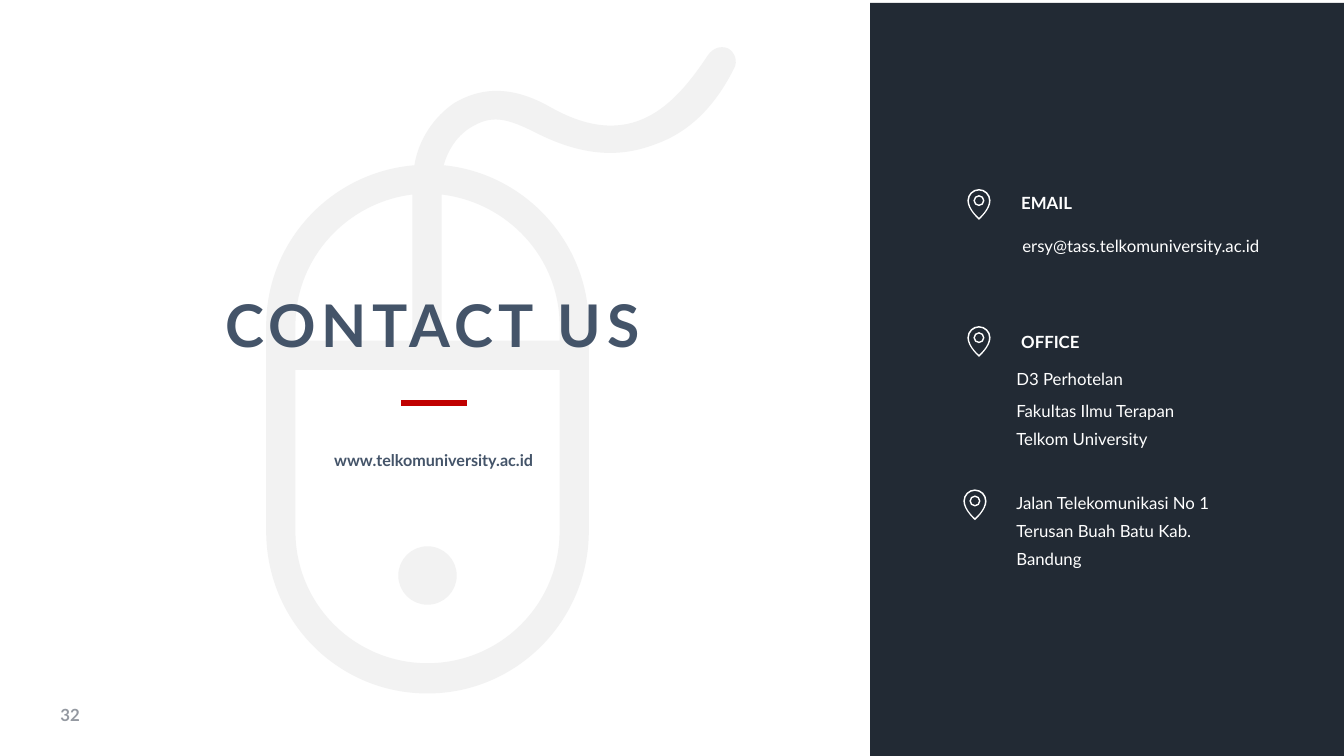
from dataclasses import dataclass

from lxml import etree
from pptx import Presentation
from pptx.dml.color import RGBColor
from pptx.enum.shapes import MSO_CONNECTOR, MSO_SHAPE
from pptx.enum.text import MSO_ANCHOR, PP_ALIGN
from pptx.oxml.ns import qn
from pptx.util import Inches, Pt

LEFT, CENTER = PP_ALIGN.LEFT, PP_ALIGN.CENTER
TOP, MIDDLE = MSO_ANCHOR.TOP, MSO_ANCHOR.MIDDLE


@dataclass(frozen=True)
class Theme:
    font: str = "Lato"
    panel: RGBColor = RGBColor.from_string("222A34")
    heading: RGBColor = RGBColor.from_string("445469")
    accent: RGBColor = RGBColor.from_string("C00000")
    mouse: RGBColor = RGBColor.from_string("F2F2F2")
    muted: RGBColor = RGBColor.from_string("9499A1")
    white: RGBColor = RGBColor.from_string("FFFFFF")
    title_size: float = 42
    web_size: float = 11.5
    body_size: float = 12
    line_pitch: float = 20.2


T = Theme()


def add_outline(s, contours, color, dx=0, dy=0):
    """Fill contours whose steps are points (x, y) or Bezier curves (x1, y1, x2, y2, x, y)."""
    builder = None
    for contour in contours:
        start, *rest = [(Inches(step[i] + dx), Inches(step[i + 1] + dy))
                        for step in contour for i in range(0, len(step), 2)]
        if builder is None:
            builder = s.shapes.build_freeform(*start)
        else:
            builder.move_to(*start)
        builder.add_line_segments(rest, close=True)
    sp = builder.convert_to_shape()
    outline = next(sp.element.iter(qn("a:path")))
    lines = iter(outline.findall(qn("a:lnTo")))
    for step in [step for contour in contours for step in contour[1:]]:
        first = next(lines)
        if len(step) == 6:
            curve = etree.Element(qn("a:cubicBezTo"))
            outline.replace(first, curve)
            curve.append(first[0])
            for line in (next(lines), next(lines)):
                curve.append(line[0])
                outline.remove(line)
    sp.shadow.inherit = False
    sp.fill.solid()
    sp.fill.fore_color.rgb = color
    sp.line.fill.background()


def write_text(sp, box, paragraphs, size, color, bold=False, align=LEFT, anchor=TOP,
               inset=(0.1, 0.05), wrap=False, pitch=None):
    """Place a text shape and fill it; paragraphs are (text, space before in points)."""
    sp.left, sp.top, sp.width, sp.height = [Inches(v) for v in box]
    tf = sp.text_frame
    tf.word_wrap = wrap
    tf.vertical_anchor = anchor
    tf.margin_left = tf.margin_right = Inches(inset[0])
    tf.margin_top = tf.margin_bottom = Inches(inset[1])
    for i, (text, before) in enumerate(paragraphs):
        p = tf.add_paragraph() if i else tf.paragraphs[0]
        p.alignment = align
        if before:
            p.space_before = Pt(before)
        if pitch:
            p.line_spacing = Pt(pitch)
        r = p.add_run()
        r.text = text
        r.font.name = T.font
        r.font.size = Pt(size)
        r.font.bold = bold
        r.font.color.rgb = color


prs = Presentation()
prs.slide_width, prs.slide_height = Inches(13.33), Inches(7.5)
s = prs.slides.add_slide(prs.slide_layouts[5])
title = s.shapes.title

# Computer mouse behind the heading
K = 0.55
unit_circle = [(0, -1), (K, -1, 1, -K, 1, 0), (1, K, K, 1, 0, 1),
               (-K, 1, -1, K, -1, 0), (-1, -K, -K, -1, 0, -1)]
buttons = [(5.55, 3.23), (5.55, 3.38), (2.93, 3.38), (2.93, 3.23),
           (2.93, 2.56, 3.44, 2.01, 4.09, 1.93), (4.09, 3.38), (4.38, 3.38), (4.38, 1.93),
           (5.04, 2.01, 5.55, 2.56, 5.55, 3.23)]
palm = [(5.55, 5.27), (5.55, 6, 4.96, 6.58, 4.24, 6.58), (3.52, 6.58, 2.93, 6, 2.93, 5.27),
        (2.93, 3.67), (5.55, 3.67)]
body_and_cable = [
    (7.22, 0.48), (7.14, 0.45, 7.07, 0.48, 7.02, 0.55), (6.69, 1.05, 6.26, 1.51, 5.47, 1.07),
    (5.02, 0.81, 4.72, 0.9, 4.51, 1.02), (4.3, 1.16, 4.15, 1.39, 4.11, 1.64),
    (3.28, 1.71, 2.64, 2.4, 2.64, 3.23), (2.64, 5.27), (2.64, 6.16, 3.35, 6.88, 4.24, 6.88),
    (5.12, 6.88, 5.84, 6.16, 5.84, 5.27), (5.84, 3.23), (5.84, 2.41, 5.21, 1.72, 4.4, 1.64),
    (4.44, 1.5, 4.52, 1.36, 4.66, 1.27), (4.87, 1.14, 5.01, 1.16, 5.34, 1.33),
    (5.89, 1.6, 6.25, 1.53, 6.53, 1.42), (6.87, 1.29, 7.11, 1.02, 7.28, 0.68),
    (7.32, 0.61, 7.29, 0.52, 7.22, 0.48)]
dot = [[(4.24, 5.71)[i % 2] + 0.29 * v for i, v in enumerate(step)] for step in unit_circle]
add_outline(s, [buttons, palm, body_and_cable, dot], T.mouse)

panel = s.shapes.add_shape(MSO_SHAPE.RECTANGLE, Inches(8.63), Inches(0.03),
                           Inches(4.74), Inches(7.5))
panel.shadow.inherit = False
panel.fill.solid()
panel.fill.fore_color.rgb = T.panel
panel.line.fill.background()

rule = s.shapes.add_connector(MSO_CONNECTOR.STRAIGHT, Inches(3.98), Inches(4),
                              Inches(4.63), Inches(4))
rule.line.color.rgb = T.accent
rule.line.width = Pt(4.5)
etree.SubElement(rule.element.spPr, qn("a:effectLst"))

# Heading, brought in front of the mouse
write_text(title, (2, 2.81, 4.58, 0.81), [("CONTACT US", 0)], T.title_size, T.heading,
           bold=True, align=CENTER)
title.text_frame.paragraphs[0].runs[0]._r.get_or_add_rPr().set("spc", "400")
title.element.getparent().append(title.element)

address = [("D3 Perhotelan", 0), ("Fakultas Ilmu Terapan Telkom University", 2.4),
           ("Jalan Telekomunikasi No 1 Terusan Buah Batu Kab. Bandung", 25)]
label = dict(size=T.body_size, color=T.white, bold=True, anchor=MIDDLE)
detail = dict(size=T.body_size, color=T.white, inset=(0.12, 0.06), wrap=True,
              pitch=T.line_pitch)
for box, paragraphs, style in [
    ((3.14, 4.42, 2.32, 0.29), [("www.telkomuniversity.ac.id", 0)],
     dict(size=T.web_size, color=T.heading, bold=True, align=CENTER, anchor=MIDDLE)),
    ((10.03, 1.86, 0.73, 0.3), [("EMAIL", 0)], label),
    ((10.02, 2.2, 2.72, 0.4), [("ersy@tass.telkomuniversity.ac.id", 0)], detail),
    ((10.03, 3.24, 0.82, 0.3), [("OFFICE", 0)], label),
    ((9.96, 3.52, 2.35, 2.2), address, detail),
    ((0.4, 6.89, 0.75, 0.4), [("32", 0)],
     dict(size=T.body_size, color=T.muted, bold=True, anchor=MIDDLE, inset=(0.2, 0.1),
          wrap=True)),
]:
    write_text(s.shapes.add_textbox(0, 0, 0, 0), box, paragraphs, **style)

# Map pins, measured from the centre of the pin's head
pin = [[[r * v for v in step] for step in unit_circle] for r in (0.04, 0.055)]
for r, tip in [(0.1, 0.17), (0.115, 0.19)]:
    k = K * r
    pin.append([(0, tip), (0, tip, -r, 0.09, -r, 0), (-r, -k, -k, -r, 0, -r),
                (k, -r, r, -k, r, 0), (r, 0.09, 0, tip, 0, tip)])
for x, y in [(9.71, 1.99), (9.71, 3.35), (9.67, 4.97)]:
    add_outline(s, pin, T.white, x, y)

prs.save("out.pptx")
